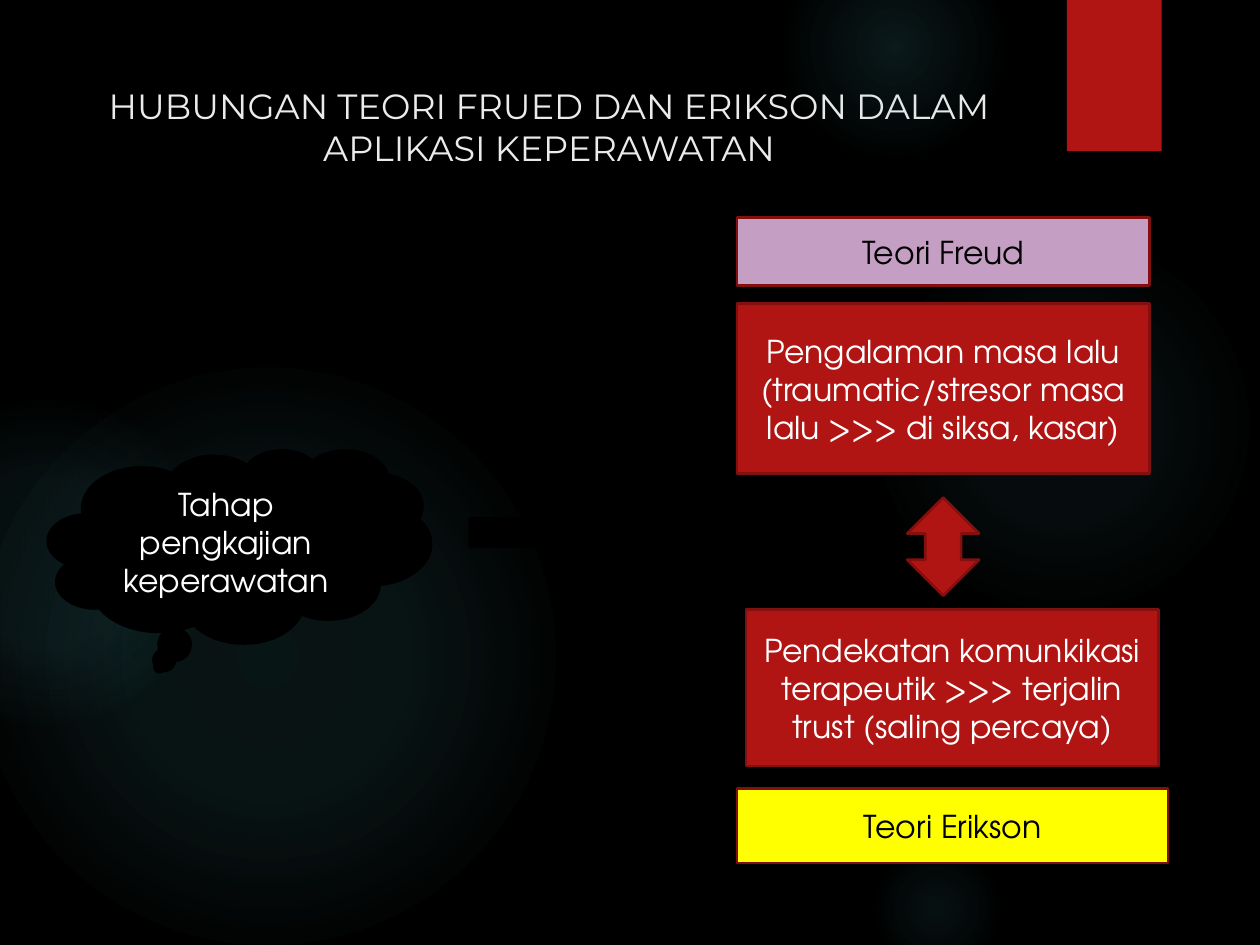
from lxml import etree
from pptx import Presentation
from pptx.dml.color import RGBColor
from pptx.enum.shapes import MSO_SHAPE as Preset
from pptx.enum.text import MSO_ANCHOR as Anchor, PP_ALIGN as Align
from pptx.oxml import parse_xml
from pptx.oxml.ns import nsdecls, qn
from pptx.util import Cm, Pt

BLACK, WHITE, RED, DARK_RED = "000000", "FFFFFF", "B01513", "82100E"
GLOW_COLOR = "50B9C1"
HEAD_FONT, BODY_FONT = "Montserrat", "TeX Gyre Adventor"

TITLE = "HUBUNGAN TEORI FRUED DAN ERIKSON DALAM APLIKASI KEPERAWATAN"
TITLE_AREA = (1.27, 1.57, 19.6, 1.7)

# left, top, diameter in cm; then (position %, opacity %) stops
GLOWS = [
    (17.5, 4.65, 7.82, [(0, 7), (36, 6), (69, 0)]),
    (15.8, -1.27, 4.45, [(0, 14), (36, 7), (73, 0)]),
    (17.5, 16.94, 2.74, [(0, 9), (36, 5), (66, 0)]),
    (-0.43, 7.42, 11.63, [(0, 11), (36, 10), (75, 0)]),
    (-2.34, 8.05, 6.55, [(0, 8), (36, 8), (72, 0)]),
]

# preset, (left, top, width, height) in cm, fill, line, text, text colour
SHAPES = [
    (Preset.RECTANGLE, (21.51, 0, 1.91, 3.05), RED, None, "", WHITE),
    (Preset.CLOUD_CALLOUT, (0.97, 9.07, 7.72, 3.89), BLACK, BLACK,
     "Tahap pengkajian keperawatan", WHITE),
    (Preset.RIGHT_ARROW, (9.47, 10.16, 4.19, 1.14), BLACK, BLACK, "", WHITE),
    (Preset.RECTANGLE, (14.86, 4.39, 8.31, 1.37), "C59EC3", DARK_RED,
     "Teori Freud", BLACK),
    (Preset.RECTANGLE, (14.86, 6.12, 8.31, 3.43), RED, DARK_RED,
     "Pengalaman masa lalu (traumatic/stresor masa lalu >>> di siksa, kasar)", WHITE),
    (Preset.RECTANGLE, (14.86, 15.9, 8.69, 1.5), "FFFF00", DARK_RED,
     "Teori Erikson", BLACK),
    (Preset.RECTANGLE, (15.04, 12.29, 8.31, 3.15), RED, DARK_RED,
     "Pendekatan komunkikasi terapeutik >>> terjalin trust (saling percaya)", WHITE),
    (Preset.UP_DOWN_ARROW, (18.29, 10.03, 1.45, 1.98), RED, DARK_RED, "", WHITE),
]


def paint(fill, color):
    fill.solid()
    fill.fore_color.rgb = RGBColor.from_string(color)


def write(box, text, font=BODY_FONT, size=18, color=WHITE, anchor=Anchor.MIDDLE):
    frame = box.text_frame
    frame.word_wrap = True
    frame.vertical_anchor = anchor
    para = frame.paragraphs[0]
    para.alignment = Align.CENTER
    span = para.add_run()
    span.text = text
    span.font.name = font
    span.font.size = Pt(size)
    span.font.color.rgb = RGBColor.from_string(color)


def add_shape(slide, preset, area, fill, line=None):
    shape = slide.shapes.add_shape(preset, *map(Cm, area))
    shape.shadow.inherit = False
    paint(shape.fill, fill)
    if line:
        paint(shape.line.fill, line)
        shape.line.width = Pt(1.5)
    else:
        shape.line.fill.background()
    return shape


def add_glow(slide, left, top, diameter, stops):
    """Add a circle whose colour fades out from its centre."""
    glow = add_shape(slide, Preset.OVAL, (left, top, diameter, diameter), GLOW_COLOR)
    gradient = parse_xml(
        f'<a:gradFill {nsdecls("a")} rotWithShape="1"><a:gsLst/><a:path path="circle">'
        '<a:fillToRect l="50000" t="50000" r="50000" b="50000"/></a:path></a:gradFill>')
    for position, opacity in stops:
        stop = etree.SubElement(gradient[0], qn("a:gs"), pos=str(position * 1000))
        color = etree.SubElement(stop, qn("a:srgbClr"), val=GLOW_COLOR)
        etree.SubElement(color, qn("a:alpha"), val=str(opacity * 1000))
    properties = glow._element.spPr
    properties.replace(properties.find(qn("a:solidFill")), gradient)


def main():
    deck = Presentation()
    deck.slide_width, deck.slide_height = Cm(25.4), Cm(19.05)
    page = deck.slides.add_slide(deck.slide_layouts[5])
    paint(page.background.fill, BLACK)

    for glow in GLOWS:
        add_glow(page, *glow)

    title = page.shapes.title
    title.left, title.top, title.width, title.height = map(Cm, TITLE_AREA)
    write(title, TITLE, font=HEAD_FONT, size=20, color="EBEBEB", anchor=Anchor.TOP)

    for preset, area, fill, line, text, color in SHAPES:
        shape = add_shape(page, preset, area, fill, line)
        if text:
            write(shape, text, color=color)

    deck.save("out.pptx")


if __name__ == "__main__":
    main()
